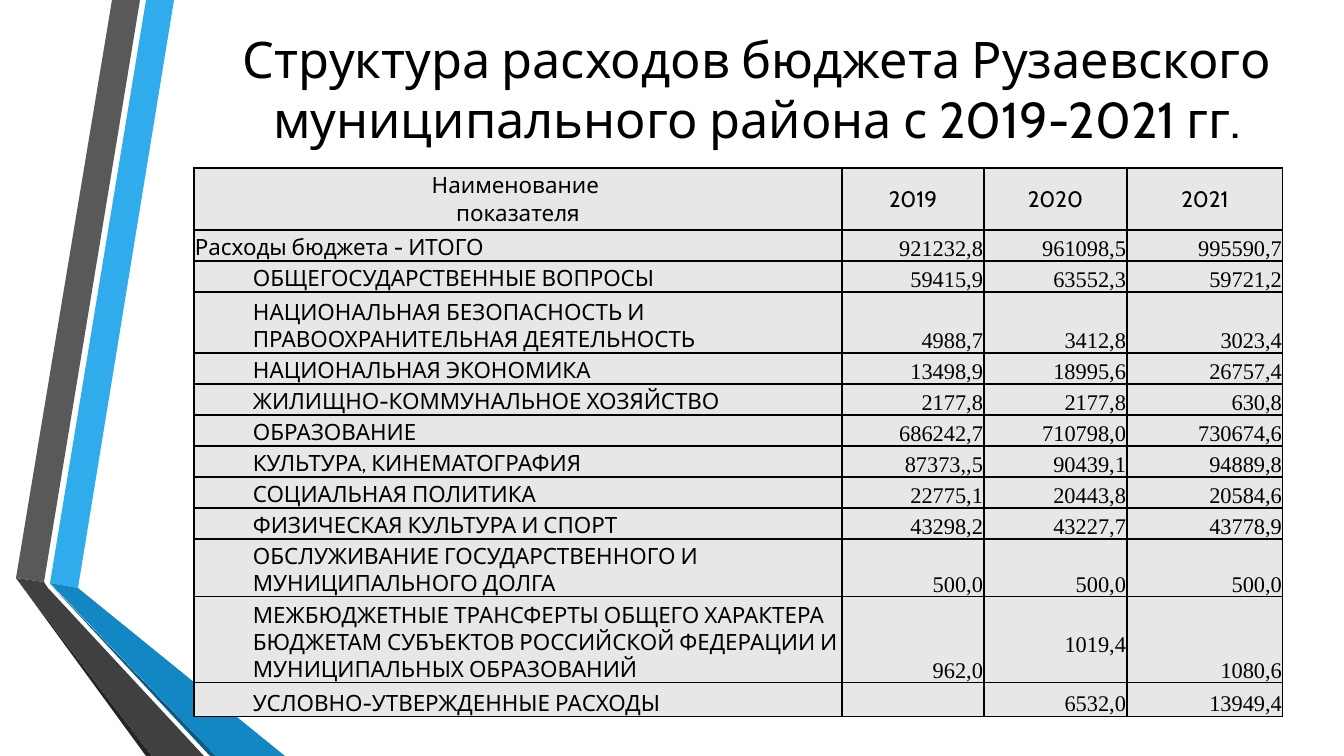
import pptx
import pptx.util
import pptx.dml.color
import pptx.enum.text
import pptx.oxml
import pptx.oxml.ns

RGBColor = pptx.dml.color.RGBColor
BLACK = RGBColor(0x00, 0x00, 0x00)
CELL_GREY = RGBColor(0xE7, 0xE7, 0xE7)
SKY = RGBColor(0x30, 0xAC, 0xEC)
BLUE = RGBColor(0x12, 0x87, 0xC3)
NAVY = RGBColor(0x0C, 0x5A, 0x82)
GREY = RGBColor(0x59, 0x59, 0x59)
DARK_GREY = RGBColor(0x40, 0x40, 0x40)
CHARCOAL = RGBColor(0x26, 0x26, 0x26)

PX = 914400 / 100.8
ALIGN = pptx.enum.text.PP_ALIGN
ANCHOR = pptx.enum.text.MSO_ANCHOR

TITLE = "Структура расходов бюджета Рузаевского муниципального района с 2019-2021 гг."
HEADER = ("Наименование \vпоказателя", "2019", "2020", "2021")
EXPENSES = [
    ("Расходы бюджета - ИТОГО", "921232,8", "961098,5", "995590,7"),
    ("ОБЩЕГОСУДАРСТВЕННЫЕ ВОПРОСЫ", "59415,9", "63552,3", "59721,2"),
    ("НАЦИОНАЛЬНАЯ БЕЗОПАСНОСТЬ И ПРАВООХРАНИТЕЛЬНАЯ ДЕЯТЕЛЬНОСТЬ", "4988,7", "3412,8", "3023,4"),
    ("НАЦИОНАЛЬНАЯ ЭКОНОМИКА", "13498,9", "18995,6", "26757,4"),
    ("ЖИЛИЩНО-КОММУНАЛЬНОЕ ХОЗЯЙСТВО", "2177,8", "2177,8", "630,8"),
    ("ОБРАЗОВАНИЕ", "686242,7", "710798,0", "730674,6"),
    ("КУЛЬТУРА, КИНЕМАТОГРАФИЯ", "87373,,5", "90439,1", "94889,8"),
    ("СОЦИАЛЬНАЯ ПОЛИТИКА", "22775,1", "20443,8", "20584,6"),
    ("ФИЗИЧЕСКАЯ КУЛЬТУРА И СПОРТ", "43298,2", "43227,7", "43778,9"),
    ("ОБСЛУЖИВАНИЕ ГОСУДАРСТВЕННОГО И МУНИЦИПАЛЬНОГО ДОЛГА", "500,0", "500,0", "500,0"),
    ("МЕЖБЮДЖЕТНЫЕ ТРАНСФЕРТЫ ОБЩЕГО ХАРАКТЕРА БЮДЖЕТАМ СУБЪЕКТОВ РОССИЙСКОЙ ФЕДЕРАЦИИ И "
     "МУНИЦИПАЛЬНЫХ ОБРАЗОВАНИЙ", "962,0", "1019,4", "1080,6"),
    ("УСЛОВНО-УТВЕРЖДЕННЫЕ РАСХОДЫ", "", "6532,0", "13949,4"),
]
RAISED_VALUE = "1019,4"
COLUMN_WIDTHS = (648, 142, 143, 156)
ROW_HEIGHTS = (62, 31, 31, 61, 31, 31, 31, 31, 31, 31, 58, 86, 34)
RIBBONS = [
    (SKY, [(50, 583), (78, 588), (174, 0), (146, 0)]),
    (GREY, [(140, 0), (112, 0), (16, 578), (44, 582)]),
    (CHARCOAL, [(16, 578), (146, 756), (152, 756)]),
    (NAVY, [(50, 584), (210, 756), (216, 756)]),
    (BLUE, [(50, 583), (216, 756), (285, 756), (78, 588)]),
    (DARK_GREY, [(204, 756), (48, 588), (44, 582), (16, 578), (152, 756)]),
]


def px(length):
    return pptx.util.Emu(round(length * PX))


def style_runs(paragraph, font, size):
    for run in paragraph.runs:
        run.font.name = font
        run.font.size = pptx.util.Pt(size)
        run.font.color.rgb = BLACK


def add_borders(cell):
    properties = cell._tc.get_or_add_tcPr()
    for index, side in enumerate(("lnL", "lnR", "lnT", "lnB")):
        properties.insert(index, pptx.oxml.parse_xml(
            f'<a:{side} {pptx.oxml.ns.nsdecls("a")} w="12700"><a:solidFill>'
            f'<a:srgbClr val="{BLACK}"/></a:solidFill></a:{side}>'))


def fill_cell(cell, text, row, column):
    is_header = row == 0
    is_item = row > 1 and column == 0
    is_value = row > 0 and column > 0
    cell.fill.solid()
    cell.fill.fore_color.rgb = CELL_GREY
    cell.vertical_anchor = ANCHOR.MIDDLE if is_header else ANCHOR.BOTTOM
    cell.margin_left = px(9 if is_item else 1)
    cell.margin_right = cell.margin_top = px(1)
    cell.margin_bottom = px(26 if text == RAISED_VALUE else 0)
    cell.text_frame.text = text
    paragraph = cell.text_frame.paragraphs[0]
    paragraph.alignment = ALIGN.CENTER if is_header else ALIGN.RIGHT if is_value else ALIGN.LEFT
    if is_item:
        paragraph.level = 1
        paragraph._p.get_or_add_pPr().set("marL", str(px(50)))
    style_runs(paragraph, "Times New Roman" if is_value else "Cabin", 16)
    add_borders(cell)


def main():
    deck = pptx.Presentation()
    deck.slide_width, deck.slide_height = px(1344), px(756)
    slide = deck.slides.add_slide(deck.slide_layouts[5])

    for color, points in RIBBONS:
        builder = slide.shapes.build_freeform(*points[0], scale=PX)
        builder.add_line_segments(points[1:], close=True)
        ribbon = builder.convert_to_shape()
        ribbon.shadow.inherit = False
        ribbon.fill.solid()
        ribbon.fill.fore_color.rgb = color
        ribbon.line.fill.background()

    title = slide.shapes.title
    title.left, title.top, title.width, title.height = map(px, (183, 19, 1148, 139))
    title.text_frame.text = TITLE
    title.text_frame.word_wrap = True
    title.text_frame.vertical_anchor = ANCHOR.MIDDLE
    title.text_frame.paragraphs[0].alignment = ALIGN.CENTER
    style_runs(title.text_frame.paragraphs[0], "Cabin", 36)

    budget = slide.shapes.add_table(
        len(ROW_HEIGHTS), len(COLUMN_WIDTHS), px(194), px(168),
        px(sum(COLUMN_WIDTHS)), px(sum(ROW_HEIGHTS))).table
    for column, width in zip(budget.columns, COLUMN_WIDTHS):
        column.width = px(width)
    for row, height in zip(budget.rows, ROW_HEIGHTS):
        row.height = px(height)
    for row, texts in enumerate([HEADER] + EXPENSES):
        for column, text in enumerate(texts):
            fill_cell(budget.cell(row, column), text, row, column)

    deck.save("out.pptx")


if __name__ == "__main__":
    main()
